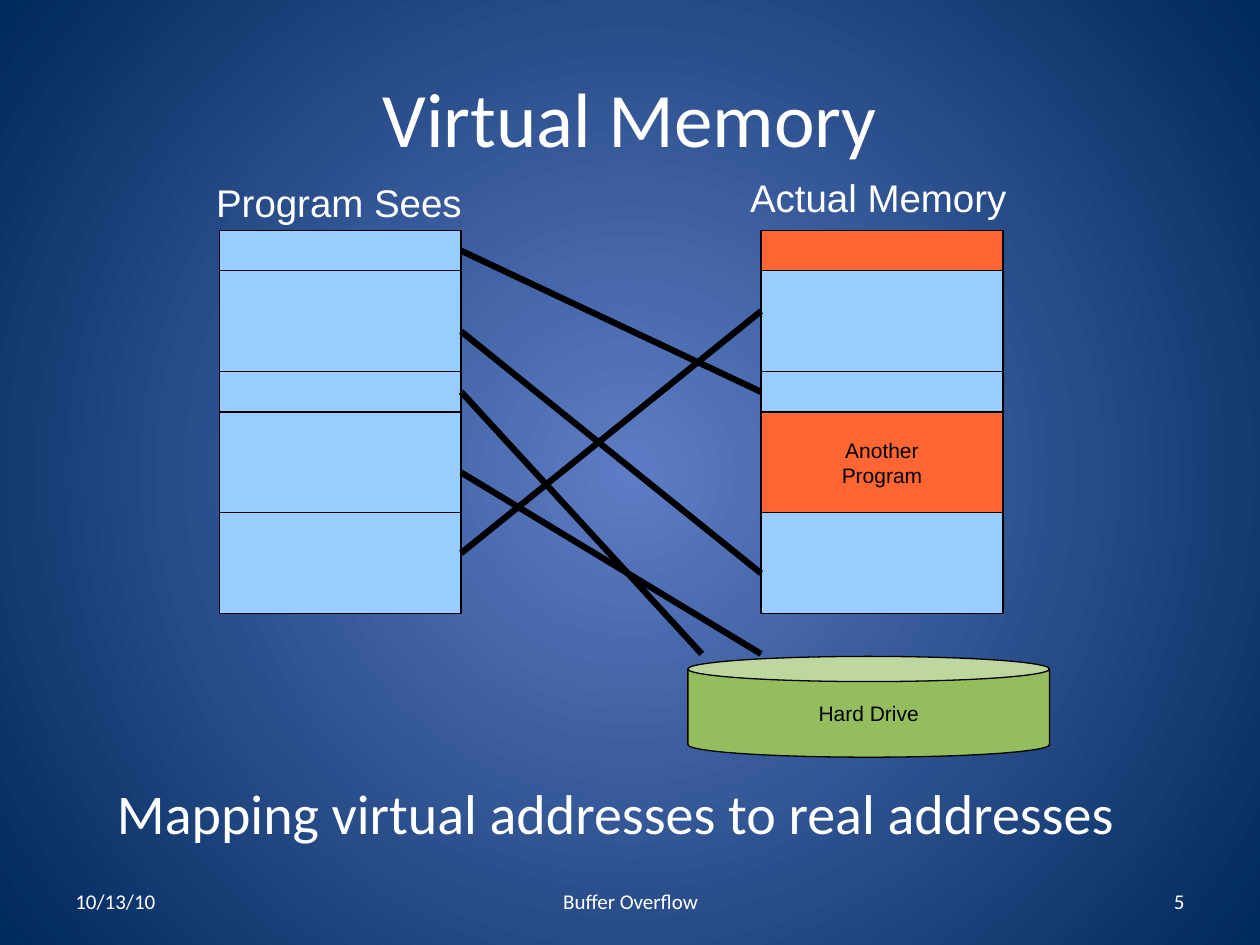
from itertools import accumulate

from pptx import Presentation
from pptx.dml.color import RGBColor
from pptx.enum.shapes import MSO_CONNECTOR, MSO_SHAPE
from pptx.enum.text import MSO_ANCHOR as Anchor, PP_ALIGN as Align
from pptx.oxml import parse_xml
from pptx.oxml.ns import nsdecls, qn
from pptx.util import Inches, Pt

WHITE, BLACK = "FFFFFF", "000000"
BLUE, ORANGE, GREEN = "99CCFF", "FF6633", "94BD5E"
STEP, MEMORY_TOP = 0.16, 1.83
PROGRAM_LEFT, ACTUAL_LEFT, MEMORY_WIDTH = 1.74, 6.04, 1.92
BLOCK_ROWS = [2, 5, 2, 5, 5]
LINKS = [(16, 4, ACTUAL_LEFT), (1, 8, ACTUAL_LEFT), (5, 17, ACTUAL_LEFT),
         (8, 21, 5.57), (12, 21, ACTUAL_LEFT)]


def color(hex_code):
    """Turn a hex string into a colour."""
    return RGBColor.from_string(hex_code)


def row_y(row):
    """Return the height on the slide of a row of the memory grid."""
    return MEMORY_TOP + row * STEP


def paint_background(slide):
    """Fill the slide with a gradient that darkens from its centre."""
    fill = slide.background.fill
    fill.gradient()
    for stop, shade in zip(fill.gradient_stops, ("5E7CC5", "00295C")):
        stop.color.rgb = color(shade)
    gradient = slide.element.find(".//" + qn("a:gradFill"))
    gradient.replace(gradient.find(qn("a:lin")), parse_xml(
        f'<a:path {nsdecls("a")} path="circle">'
        '<a:fillToRect l="50000" t="50000" r="50000" b="50000"/></a:path>'))


def write(shape, text, size, font, shade, align, anchor, wrap):
    """Put formatted text into a shape."""
    frame = shape.text_frame
    frame.text = text
    frame.word_wrap = wrap
    frame.vertical_anchor = anchor
    for paragraph in frame.paragraphs:
        paragraph.alignment = align
        for run in paragraph.runs:
            run.font.size = Pt(size)
            run.font.name = font
            run.font.color.rgb = color(shade)


def add_text(slide, box, text, size, font="Calibri", align=Align.CENTER,
             anchor=Anchor.MIDDLE, wrap=True):
    """Add a white text box."""
    holder = slide.shapes.add_textbox(*map(Inches, box))
    write(holder, text, size, font, WHITE, align, anchor, wrap)


def add_block(slide, box, fill, text="", kind=MSO_SHAPE.RECTANGLE):
    """Add an outlined memory block or drive with an optional caption."""
    block = slide.shapes.add_shape(kind, *map(Inches, box))
    block.shadow.inherit = False
    block.fill.solid()
    block.fill.fore_color.rgb = color(fill)
    block.line.color.rgb = color(BLACK)
    block.line.width = Pt(0.75)
    if text:
        write(block, text, 12, "Arial", BLACK, Align.CENTER, Anchor.MIDDLE, False)


def add_memory(slide, left, fills, captions):
    """Stack the blocks of one memory column."""
    starts = accumulate(BLOCK_ROWS, initial=0)
    for start, rows, fill, caption in zip(starts, BLOCK_ROWS, fills, captions):
        add_block(slide, (left, row_y(start), MEMORY_WIDTH, rows * STEP), fill, caption)


def add_link(slide, from_row, to_row, to_x):
    """Draw a thick line from a program block to its real place."""
    ends = PROGRAM_LEFT + MEMORY_WIDTH, row_y(from_row), to_x, row_y(to_row)
    link = slide.shapes.add_connector(MSO_CONNECTOR.STRAIGHT, *map(Inches, ends))
    link.line.color.rgb = color(BLACK)
    link.line.width = Pt(3.6)
    link.element.spPr.append(parse_xml(f'<a:effectLst {nsdecls("a")}/>'))


def main():
    """Build the virtual memory slide."""
    deck = Presentation()
    deck.slide_width, deck.slide_height = Inches(10), Inches(7.5)
    slide = deck.slides.add_slide(deck.slide_layouts[6])
    paint_background(slide)

    add_text(slide, (0.5, 0.3, 9, 1.25), "Virtual Memory", 44)
    add_text(slide, (0.83, 6.13, 8.67, 0.62),
             "Mapping virtual addresses to real addresses", 32,
             align=Align.LEFT, anchor=Anchor.TOP)
    for left, width, text, align in [(0.5, 2.33, "10/13/10", Align.LEFT),
                                     (3.42, 3.17, "Buffer Overflow", Align.CENTER),
                                     (7.17, 2.33, "5", Align.RIGHT)]:
        add_text(slide, (left, 6.95, width, 0.4), text, 12, align=align)

    add_memory(slide, PROGRAM_LEFT, [BLUE] * 5, [""] * 5)
    add_memory(slide, ACTUAL_LEFT, [ORANGE, BLUE, BLUE, ORANGE, BLUE],
               ["", "", "", "Another\nProgram", ""])
    add_block(slide, (5.46, 5.21, 2.87, 0.8), GREEN, "Hard Drive", MSO_SHAPE.CAN)
    for link in LINKS:
        add_link(slide, *link)

    for left, top, heading in [(1.53, 1.37, "Program Sees"),
                               (5.81, 1.33, "Actual Memory")]:
        add_text(slide, (left, top, 2.32, 0.5), heading, 22, "Arial",
                 anchor=Anchor.TOP, wrap=False)
    deck.save("out.pptx")


if __name__ == "__main__":
    main()
